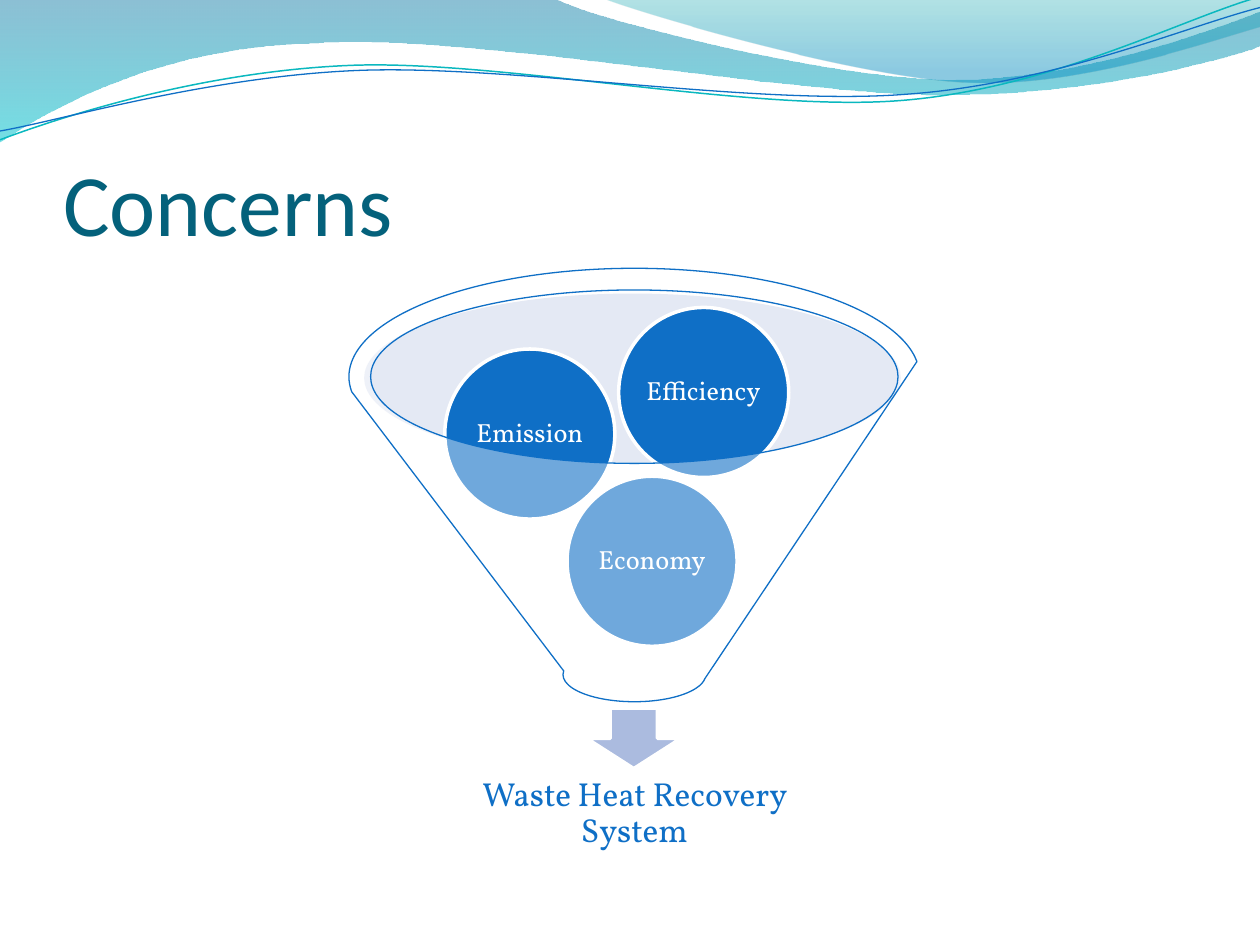
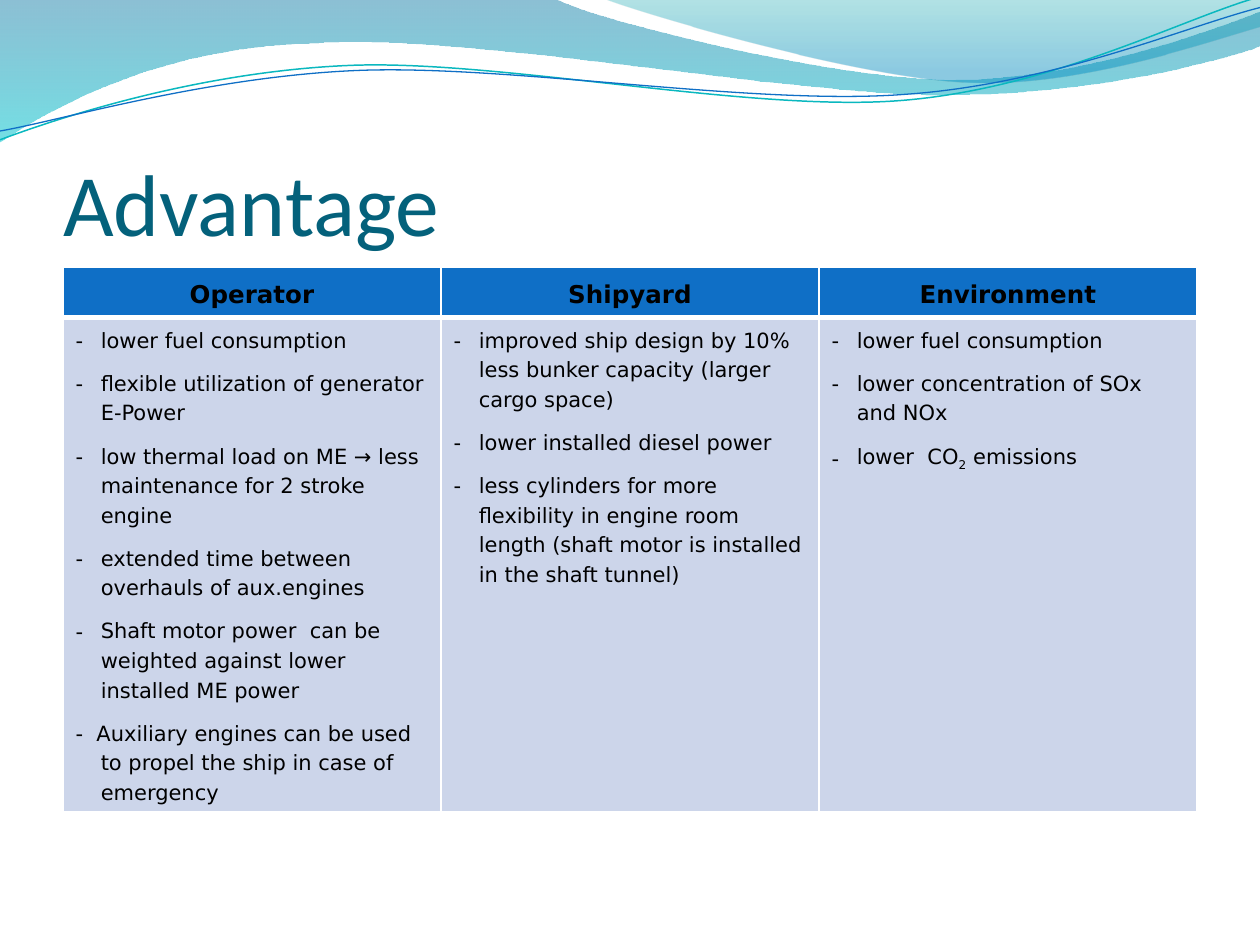
from pptx import Presentation
from pptx.dml.color import RGBColor
from pptx.enum import shapes, text
from pptx.oxml import ns, xmlchemy
from pptx.util import Inches, Pt

BLUE = RGBColor(0x0F, 0x6F, 0xC6)
TEAL = RGBColor(0x0A, 0xB8, 0xBF)
TITLE_COLOR = RGBColor(0x04, 0x61, 0x7B)
WAVE_DARK = RGBColor(0x00, 0x74, 0xA1)
WAVE_AQUA = RGBColor(0x00, 0xC6, 0xCF)
CREST_GREEN = RGBColor(0x00, 0xA1, 0xA9)
CREST_BLUE = RGBColor(0x00, 0x8B, 0xBF)
RIM = RGBColor(0xBD, 0xC8, 0xE5)
ARROW = RGBColor(0xAB, 0xBB, 0xDF)
CELL = RGBColor(0xCC, 0xD5, 0xEA)
WHITE = RGBColor(0xFF, 0xFF, 0xFF)
BLACK = RGBColor(0x00, 0x00, 0x00)

TITLE_FONT, BODY_FONT, TABLE_FONT = "Calibri", "Vollkorn", "DejaVu Sans"
TITLE_BOX = (0.5, 0.77, 9, 1.25)
FUNNEL_BOX = (2.77, 2.13, 4.53, 3.44)
TABLE_BOX = (0.5, 2.12, 9, 4.32)
HEADER_HEIGHT = 0.4

# Each segment holds one end point (line) or two controls and an end point (curve)
WAVE = [
    (0, 0), [(4.4, -0.01)],
    [(4.76, 0.17), (6.64, 0.63), (7.58, 0.63)],
    [(8.53, 0.63), (9.58, 0.26), (10, 0.09)],
    [(10.01, 0.36)],
    [(9.83, 0.44), (8.7, 0.76), (7.46, 0.75)],
    [(6.22, 0.75), (3.82, 0.28), (2.57, 0.34)],
    [(1.29, 0.36), (0.46, 0.83), (-0.01, 1.13)],
    [(0, 0)],
]
CREST = [
    (4.79, -0.01),
    [(5.09, 0.11), (6.82, 0.62), (7.69, 0.65)],
    [(8.56, 0.69), (9.61, 0.32), (10, 0.21)],
    [(10, 0)], [(4.79, -0.01)],
]
TEAL_LINE = [
    (0, 1.11),
    [(0.48, 0.93), (1.58, 0.57), (2.77, 0.52)],
    [(3.95, 0.47), (5.93, 0.89), (7.13, 0.8)],
    [(8.33, 0.71), (9.38, 0.15), (9.98, -0.02)],
]
BLUE_LINE = [
    (0, 1.04),
    [(0.47, 0.96), (1.64, 0.61), (2.83, 0.56)],
    [(4.03, 0.51), (5.97, 0.84), (7.17, 0.75)],
    [(8.36, 0.67), (9.41, 0.21), (10, 0.06)],
]

# Label and offset of each ball from the funnel's corner
BALLS = [("Economy", 1.73, 1.65), ("Emission", 0.76, 0.64), ("Efficiency", 2.14, 0.31)]

# Bars enclose a subscript; an item with its own dash takes no bullet
ADVANTAGES = {
    "Operator": [
        "lower fuel consumption",
        "flexible utilization of generator E-Power",
        "low thermal load on ME → less maintenance for 2 stroke engine",
        "extended time between overhauls of aux.engines",
        "Shaft motor power  can be weighted against lower installed ME power",
        "-  Auxiliary engines can be used to propel the ship in case of emergency",
    ],
    "Shipyard": [
        "improved ship design by 10% less bunker capacity (larger cargo space)",
        "lower installed diesel power",
        "less cylinders for more flexibility in engine room length "
        "(shaft motor is installed in the shaft tunnel)",
    ],
    "Environment": [
        "lower fuel consumption",
        "lower concentration of SOx\vand NOx",
        "lower  CO|2| emissions",
    ],
}


def add_element(parent, tag, **attributes):
    element = xmlchemy.OxmlElement(tag)
    for name, value in attributes.items():
        element.set(name, str(value))
    parent.append(element)
    return element


def set_opacity(shape, percents):
    """Give the fill colours of a shape their opacity, in order."""
    for color, percent in zip(shape.element.spPr.iter(ns.qn("a:srgbClr")), percents):
        add_element(color, "a:alpha", val=percent * 1000)


def format_runs(paragraph, font_name, size, color, bold=False):
    for run in paragraph.runs:
        run.font.name = font_name
        run.font.size = Pt(size)
        run.font.bold = bold
        run.font.color.rgb = color


def set_margins(frame, left, top, right, bottom):
    frame.margin_left, frame.margin_top = Inches(left), Inches(top)
    frame.margin_right, frame.margin_bottom = Inches(right), Inches(bottom)


# Waves shared by all slides
def add_outline(slide, outline, close):
    """Build the outline from lines, then merge each control triple into a curve."""
    start, *segments = outline
    builder = slide.shapes.build_freeform(*map(Inches, start))
    points = [tuple(map(Inches, point)) for segment in segments for point in segment]
    builder.add_line_segments(points, close=close)
    shape = builder.convert_to_shape()
    shape.shadow.inherit = False
    lines = iter(list(shape.element.spPr.iter(ns.qn("a:lnTo"))))
    for segment in segments:
        group = [next(lines) for _ in segment]
        if len(group) == 3:
            curve = xmlchemy.OxmlElement("a:cubicBezTo")
            group[0].addprevious(curve)
            for line in group:
                curve.append(line[0])
                line.getparent().remove(line)
    return shape


def add_waves(slide):
    """Draw the waves and move them to the master behind its placeholders."""
    waves = []
    for outline, stops in (
            (WAVE, [(0, WAVE_DARK, 45), (1, WAVE_AQUA, 55)]),
            (CREST, [(0, CREST_GREEN, 30), (0.8, CREST_BLUE, 45)])):
        wave = add_outline(slide, outline, close=True)
        wave.line.fill.background()
        wave.fill.gradient()
        wave.fill.gradient_angle = 270
        for stop, (position, color, _) in zip(wave.fill.gradient_stops, stops):
            stop.position = position
            stop.color.rgb = color
        set_opacity(wave, [opacity for _, _, opacity in stops])
        waves.append(wave)
    for outline, color, width in ((TEAL_LINE, TEAL, 0.85), (BLUE_LINE, BLUE, 0.75)):
        wave = add_outline(slide, outline, close=False)
        wave.fill.background()
        wave.line.color.rgb = color
        wave.line.width = Pt(width)
        waves.append(wave)
    tree = slide.slide_layout.slide_master.element.cSld.spTree
    for index, wave in enumerate(waves):
        tree.insert(2 + index, wave.element)


def add_title(slide, title_text):
    title = slide.shapes.title
    title.left, title.top, title.width, title.height = map(Inches, TITLE_BOX)
    frame = title.text_frame
    frame.text = title_text
    frame.auto_size = text.MSO_AUTO_SIZE.NONE
    frame.vertical_anchor = text.MSO_ANCHOR.BOTTOM
    set_margins(frame, 0, 0.05, 0, 0)
    frame.paragraphs[0].alignment = text.PP_ALIGN.LEFT
    format_runs(frame.paragraphs[0], TITLE_FONT, 50, TITLE_COLOR)


# Funnel diagram
def add_figure(slide, kind, box, fill, line=None, width=0):
    shape = slide.shapes.add_shape(kind, *map(Inches, box))
    shape.shadow.inherit = False
    shape.fill.solid()
    shape.fill.fore_color.rgb = fill
    if line is None:
        shape.line.fill.background()
    else:
        shape.line.color.rgb = line
        shape.line.width = Pt(width)
    return shape


def set_label(shape, label, size, color, margin):
    frame = shape.text_frame
    frame.text = label
    frame.word_wrap = True
    frame.vertical_anchor = text.MSO_ANCHOR.MIDDLE
    set_margins(frame, *[margin] * 4)
    paragraph = frame.paragraphs[0]
    paragraph.alignment = text.PP_ALIGN.CENTER
    paragraph.line_spacing = 0.9
    format_runs(paragraph, BODY_FONT, size, color)


def add_funnel(slide, box):
    left, top, width, height = box
    center, bottom = left + width / 2, top + height
    preset = shapes.MSO_SHAPE

    rim = add_figure(slide, preset.OVAL, (left + 0.12, top + 0.2, 4.26, 1.34), RIM)
    set_opacity(rim, [40])

    # Result below the funnel
    add_figure(slide, preset.DOWN_ARROW, (center - 0.38, bottom + 0.05, 0.75, 0.48),
               ARROW, WHITE, 2)
    result = slide.shapes.add_textbox(
        *map(Inches, (center - 1.8, bottom + 0.44, 3.6, 0.9)))
    set_label(result, "Waste Heat Recovery System", 19, BLUE, 0.15)

    # Balls, then the glass in front of them
    for label, x, y in BALLS:
        ball = add_figure(slide, preset.OVAL, (left + x, top + y, 1.35, 1.35),
                          BLUE, WHITE, 2)
        set_label(ball, label, 15, WHITE, 0.02)
    glass = add_figure(slide, preset.FUNNEL, box, WHITE, BLUE, 0.75)
    set_opacity(glass, [40])


# Advantage table
def style_cell(cell, fill, top_width, bottom_width):
    cell.fill.solid()
    cell.fill.fore_color.rgb = fill
    properties = cell._tc.get_or_add_tcPr()
    widths = {"a:lnL": 1, "a:lnR": 1, "a:lnT": top_width, "a:lnB": bottom_width}
    for index, (tag, width) in enumerate(widths.items()):
        border = add_element(properties, tag, w=Pt(width))
        solid = add_element(border, "a:solidFill")
        add_element(solid, "a:srgbClr", val=WHITE)
        properties.insert(index, border)


def fill_header(cell, heading):
    style_cell(cell, BLUE, 1, 3)
    cell.vertical_anchor = text.MSO_ANCHOR.MIDDLE
    cell.text_frame.text = heading
    paragraph = cell.text_frame.paragraphs[0]
    paragraph.alignment = text.PP_ALIGN.CENTER
    paragraph.line_spacing = 1.2
    paragraph.space_before = Pt(2.8)
    format_runs(paragraph, TABLE_FONT, 14, BLACK, bold=True)


def fill_list(cell, items):
    style_cell(cell, CELL, 3, 1)
    frame = cell.text_frame
    for index, item in enumerate(items):
        paragraph = frame.add_paragraph() if index else frame.paragraphs[0]
        pieces = item.split("|")
        paragraph.text = pieces[0]
        for piece in pieces[1:]:
            paragraph.add_run().text = piece
        paragraph.line_spacing = 1.2
        paragraph.space_before = Pt(7.8)
        format_runs(paragraph, TABLE_FONT, 12, BLACK)
        if len(pieces) > 1:
            paragraph.runs[1]._r.get_or_add_rPr().set("baseline", "-25000")
        properties = paragraph._p.get_or_add_pPr()
        properties.set("marL", str(Inches(0.2)))
        properties.set("indent", str(-Inches(0.2)))
        if not item.startswith("-"):
            add_element(properties, "a:buFont", typeface=TABLE_FONT)
            add_element(properties, "a:buChar", char="-")


def add_advantages(slide, box):
    frame = slide.shapes.add_table(2, len(ADVANTAGES), *map(Inches, box))
    table = frame.table
    table.first_row = table.horz_banding = False
    table.rows[0].height = Inches(HEADER_HEIGHT)
    table.rows[1].height = Inches(box[3] - HEADER_HEIGHT)
    for column, (heading, items) in enumerate(ADVANTAGES.items()):
        fill_header(table.cell(0, column), heading)
        fill_list(table.cell(1, column), items)


def main():
    presentation = Presentation()
    presentation.slide_width, presentation.slide_height = Inches(10), Inches(7.5)
    title_only = presentation.slide_layouts[5]

    concerns = presentation.slides.add_slide(title_only)
    add_waves(concerns)
    add_title(concerns, "Concerns")
    add_funnel(concerns, FUNNEL_BOX)

    advantage = presentation.slides.add_slide(title_only)
    add_title(advantage, "Advantage")
    add_advantages(advantage, TABLE_BOX)

    presentation.save("out.pptx")


if __name__ == "__main__":
    main()
